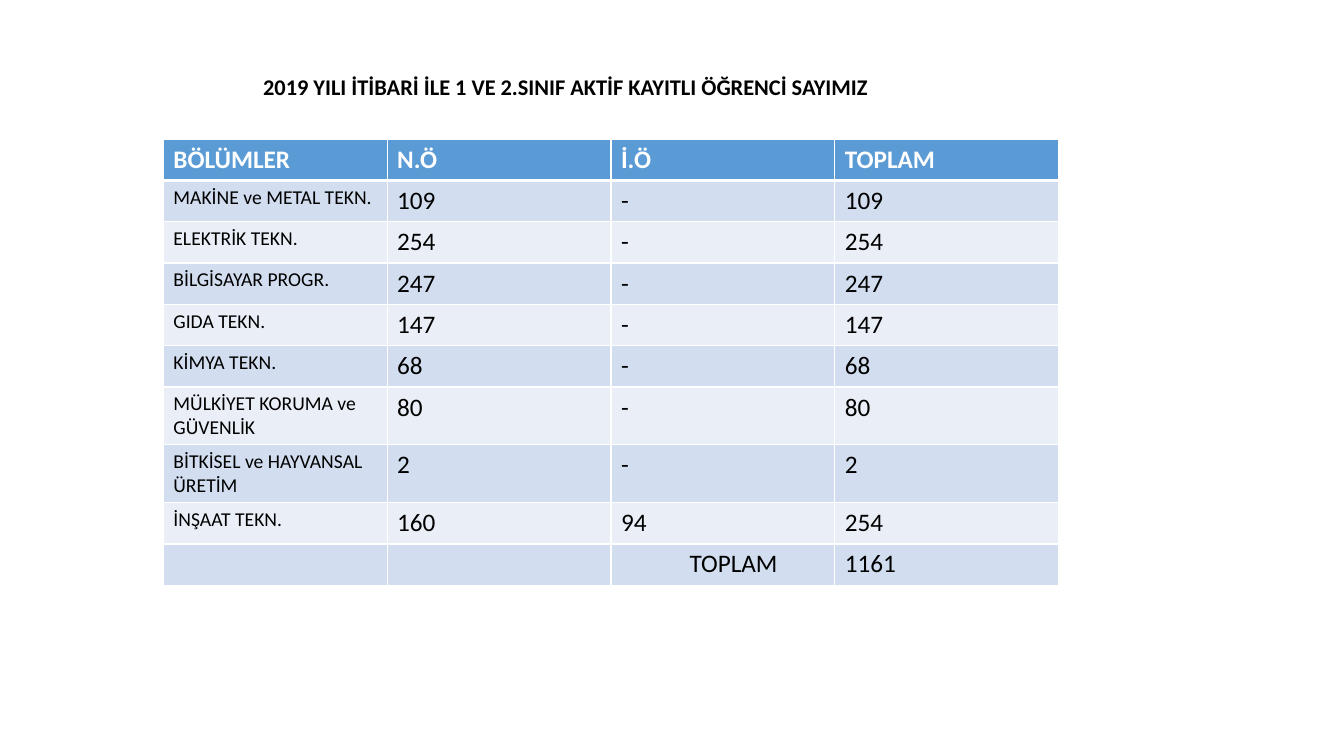
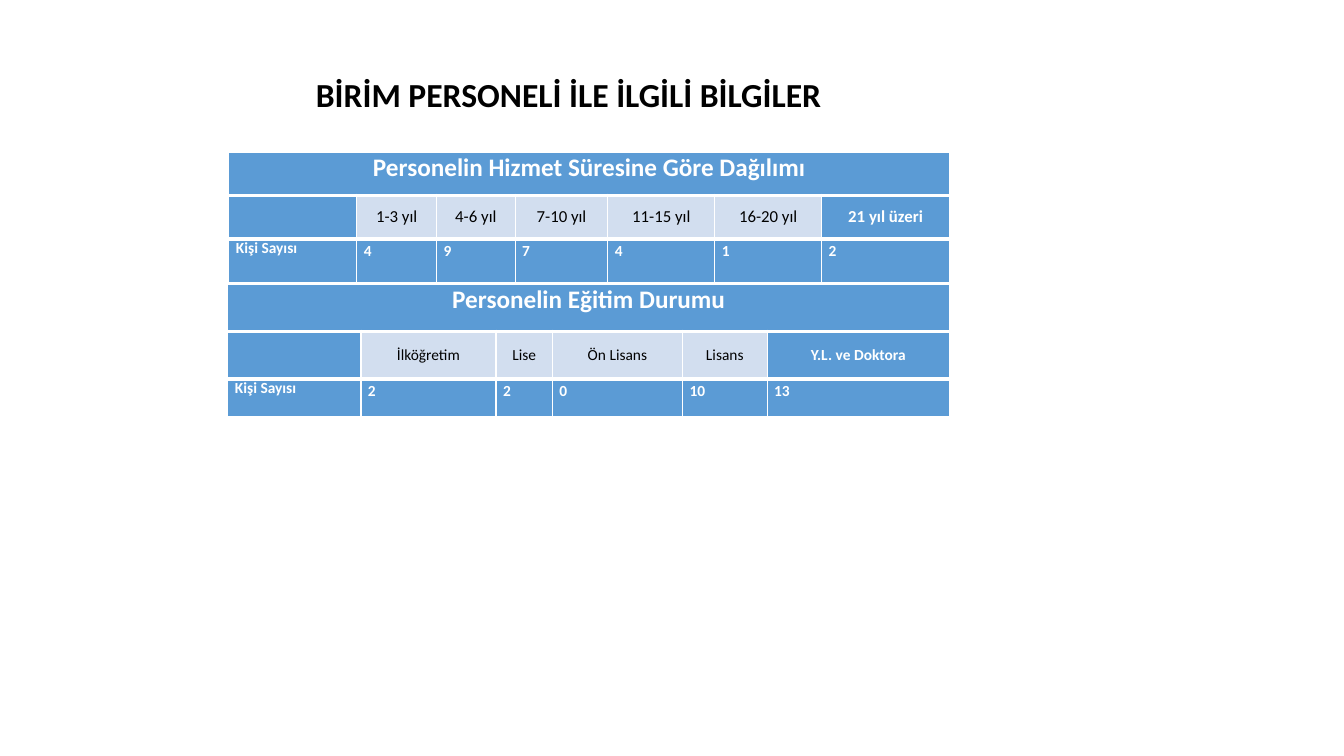
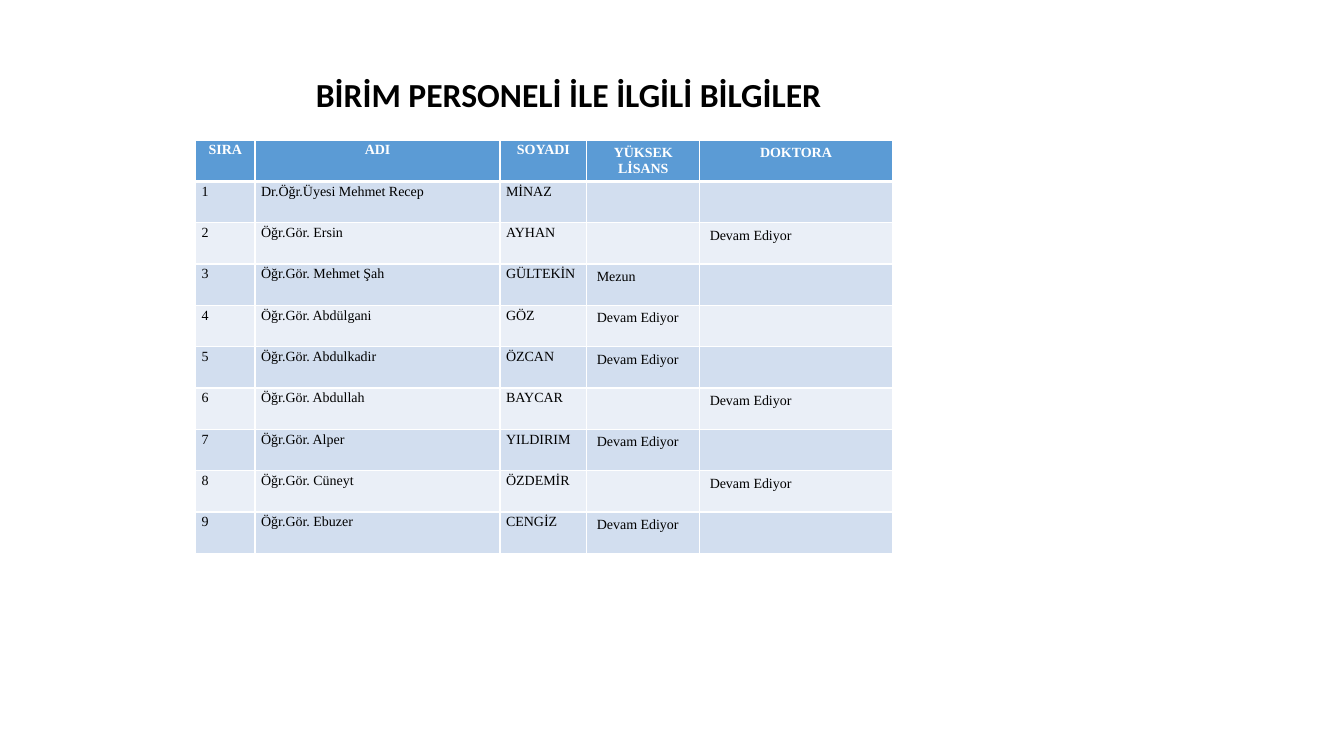
from dataclasses import dataclass, replace

from pptx import Presentation
from pptx.dml.color import RGBColor
from pptx.enum.text import MSO_ANCHOR, MSO_AUTO_SIZE, PP_ALIGN
from pptx.oxml import parse_xml
from pptx.oxml.ns import nsdecls
from pptx.util import Inches, Pt

LEFT, CENTER = PP_ALIGN.LEFT, PP_ALIGN.CENTER
TOP, MIDDLE = MSO_ANCHOR.TOP, MSO_ANCHOR.MIDDLE
NO_AUTOFIT = MSO_AUTO_SIZE.NONE
TITLE_ONLY = 5


@dataclass(frozen=True)
class Theme:
    """Colours, fonts and sizes shared by the slides."""
    accent: str = "5B9BD5"
    band_dark: str = "D2DEEF"
    band_light: str = "EAEFF7"
    white: str = "FFFFFF"
    black: str = "000000"
    sans: str = "Calibri"
    serif: str = "Times New Roman"
    title: int = 24
    small_title: int = 16
    large: int = 18
    department: int = 14
    service: int = 12
    count: int = 11
    staff: int = 10
    thin: int = 1
    heavy: int = 3


THEME = Theme()


@dataclass(frozen=True)
class CellStyle:
    """Look of one table cell; margins are in inches."""
    fill: str = THEME.accent
    color: str = THEME.white
    bold: bool = True
    size: int = THEME.large
    font: str = THEME.sans
    align: PP_ALIGN = LEFT
    anchor: MSO_ANCHOR = TOP
    margin_left: float = 0.1
    margin_right: float = 0.1
    margin_vertical: float = 0.05
    spacing: float = 1.0


HEADER = CellStyle()
COMPACT = replace(HEADER, margin_left=0.07, margin_right=0.07, margin_vertical=0)
STAFF_TITLE = "BİRİM PERSONELİ İLE İLGİLİ BİLGİLER"

DEPARTMENTS = [
    ("BÖLÜMLER", "N.Ö", "İ.Ö", "TOPLAM"),
    ("MAKİNE ve METAL TEKN.", "109", "-", "109"),
    ("ELEKTRİK TEKN.", "254", "-", "254"),
    ("BİLGİSAYAR PROGR.", "247", "-", "247"),
    ("GIDA TEKN.", "147", "-", "147"),
    ("KİMYA TEKN.", "68", "-", "68"),
    ("MÜLKİYET KORUMA ve GÜVENLİK", "80", "-", "80"),
    ("BİTKİSEL ve HAYVANSAL ÜRETİM", "2", "-", "2"),
    ("İNŞAAT TEKN.", "160", "94", "254"),
    ("", "", "TOPLAM", "1161"),
]
EDUCATION = [
    ("Personelin Eğitim Durumu", "", "", "", "", ""),
    ("", "İlköğretim", "Lise", "Ön Lisans", "Lisans", "Y.L. ve Doktora"),
    ("Kişi Sayısı", "2", "2", "0", "10", "13"),
]
SERVICE = [
    ("Personelin Hizmet Süresine Göre Dağılımı", "", "", "", "", "", ""),
    ("", "1-3 yıl", "4-6 yıl", "7-10 yıl", "11-15 yıl", "16-20 yıl", "21 yıl üzeri"),
    ("Kişi Sayısı", "4", "9", "7", "4", "1", "2"),
]
ONGOING = "Devam Ediyor"
STAFF = [
    ("SIRA", "ADI", "SOYADI", "YÜKSEK LİSANS", "DOKTORA"),
    ("1", "Dr.Öğr.Üyesi Mehmet Recep", "MİNAZ", "", ""),
    ("2", "Öğr.Gör. Ersin", "AYHAN", "", ONGOING),
    ("3", "Öğr.Gör. Mehmet Şah", "GÜLTEKİN", "Mezun", ""),
    ("4", "Öğr.Gör. Abdülgani", "GÖZ", ONGOING, ""),
    ("5", "Öğr.Gör. Abdulkadir", "ÖZCAN", ONGOING, ""),
    ("6", "Öğr.Gör. Abdullah", "BAYCAR", "", ONGOING),
    ("7", "Öğr.Gör. Alper", "YILDIRIM", ONGOING, ""),
    ("8", "Öğr.Gör. Cüneyt", "ÖZDEMİR", "", ONGOING),
    ("9", "Öğr.Gör. Ebuzer", "CENGİZ", ONGOING, ""),
]


def format_paragraph(paragraph, size, color, font, bold, align):
    """Set the alignment of a paragraph and the font of its runs."""
    paragraph.alignment = align
    for run in paragraph.runs:
        run.font.size = Pt(size)
        run.font.name = font
        run.font.bold = bold
        run.font.color.rgb = RGBColor.from_string(color)


def add_titled_slide(presentation, title, size, height, align=CENTER, margin_left=0.1):
    """Add a slide whose title sits in the shared title position."""
    slide = presentation.slides.add_slide(presentation.slide_layouts[TITLE_ONLY])
    shape = slide.shapes.title
    shape.left, shape.top = Inches(1.94), Inches(0.68)
    shape.width, shape.height = Inches(7.4), Inches(height)
    text_frame = shape.text_frame
    text_frame.text = title
    text_frame.word_wrap = True
    text_frame.auto_size = NO_AUTOFIT
    text_frame.vertical_anchor = TOP
    text_frame.margin_left = Inches(margin_left)
    format_paragraph(text_frame.paragraphs[0], size, THEME.black, THEME.sans, True, align)
    return slide


def set_borders(cell, top, bottom):
    """Draw white cell borders with the given top and bottom widths."""
    properties = cell._tc.get_or_add_tcPr()
    widths = {"lnL": THEME.thin, "lnR": THEME.thin, "lnT": top, "lnB": bottom}
    for index, (side, width) in enumerate(widths.items()):
        properties.insert(index, parse_xml(
            f'<a:{side} {nsdecls("a")} w="{Pt(width)}"><a:solidFill>'
            f'<a:srgbClr val="{THEME.white}"/></a:solidFill></a:{side}>'))


def format_cell(cell, text, style):
    """Write the text of a cell and apply its style."""
    cell.fill.solid()
    cell.fill.fore_color.rgb = RGBColor.from_string(style.fill)
    cell.vertical_anchor = style.anchor
    cell.margin_left = Inches(style.margin_left)
    cell.margin_right = Inches(style.margin_right)
    cell.margin_top = cell.margin_bottom = Inches(style.margin_vertical)
    cell.text_frame.text = text
    paragraph = cell.text_frame.paragraphs[0]
    paragraph.line_spacing = style.spacing
    format_paragraph(paragraph, style.size, style.color, style.font, style.bold, style.align)


def add_styled_table(slide, left, top, widths, heights, rows, style_for, heavy_lines=(1,)):
    """Add a table; heavy_lines are the row boundaries drawn thicker."""
    frame = slide.shapes.add_table(len(rows), len(widths), Inches(left), Inches(top),
                                   Inches(sum(widths)), Inches(sum(heights)))
    table = frame.table
    table.horz_banding = False
    for column, width in zip(table.columns, widths):
        column.width = Inches(width)
    for row, height in zip(table.rows, heights):
        row.height = Inches(height)
    for row_index, texts in enumerate(rows):
        top_width, bottom_width = (
            THEME.heavy if line in heavy_lines else THEME.thin
            for line in (row_index, row_index + 1))
        for column_index, text in enumerate(texts):
            cell = table.cell(row_index, column_index)
            format_cell(cell, text, style_for(row_index, column_index))
            set_borders(cell, top_width, bottom_width)
    return table


def banded(style, row):
    """Turn a header style into the body style of a banded row."""
    fill = THEME.band_dark if row % 2 else THEME.band_light
    return replace(style, fill=fill, color=THEME.black, bold=False)


def department_style(row, column):
    """Style a cell of the student table."""
    if row == 0:
        return HEADER
    style = banded(HEADER, row)
    if column == 0:
        return replace(style, size=THEME.department)
    if row == len(DEPARTMENTS) - 1 and column == 2:
        return replace(style, margin_left=0.78)
    return style


def staff_style(row, column):
    """Style a cell of the staff table."""
    style = replace(HEADER, font=THEME.serif, size=THEME.staff)
    if column < 3:
        style = replace(style, margin_left=0.06, margin_right=0.06,
                        margin_vertical=0, spacing=1.15)
    return banded(style, row) if row else replace(style, align=CENTER)


def add_distribution(slide, left, top, widths, heights, rows, label_size):
    """Add a table with a merged heading, a label row and a count row."""
    last_column = len(widths) - 1

    def style_for(row, column):
        """Style a cell of the distribution table."""
        if row == 0:
            return replace(COMPACT, align=CENTER)
        if row == 2:
            return replace(COMPACT, size=THEME.count, spacing=1.15 if column else 1.0)
        style = replace(COMPACT, size=label_size, align=CENTER, anchor=MIDDLE)
        return banded(style, row) if 0 < column < last_column else style

    table = add_styled_table(slide, left, top, widths, heights, rows, style_for, (1, 2))
    table.cell(0, 0).merge(table.cell(0, last_column))


def main():
    """Build and save the presentation."""
    presentation = Presentation()
    presentation.slide_width, presentation.slide_height = Inches(13.33), Inches(7.5)

    slide = add_titled_slide(
        presentation, "2019 YILI İTİBARİ İLE 1 VE 2.SINIF AKTİF KAYITLI ÖĞRENCİ SAYIMIZ",
        THEME.small_title, 0.37, LEFT, 0.67)
    add_styled_table(slide, 1.62, 1.38, [2.22] * 4, [0.41] * len(DEPARTMENTS),
                     DEPARTMENTS, department_style)

    slide = add_titled_slide(presentation, STAFF_TITLE, THEME.title, 0.91)
    add_distribution(slide, 2.26, 2.82, [1.32, 1.34, 0.56, 1.29, 0.84, 1.81],
                     [0.47, 0.47, 0.37], EDUCATION, THEME.count)
    add_distribution(slide, 2.27, 1.51, [1.27, 0.79, 0.78, 0.92, 1.06, 1.06, 1.27],
                     [0.43] * 3, SERVICE, THEME.service)

    slide = add_titled_slide(presentation, STAFF_TITLE, THEME.title, 0.91)
    add_styled_table(slide, 1.94, 1.39, [0.59, 2.43, 0.86, 1.12, 1.91],
                     [0.41] * len(STAFF), STAFF, staff_style)

    presentation.save("out.pptx")


if __name__ == "__main__":
    main()
